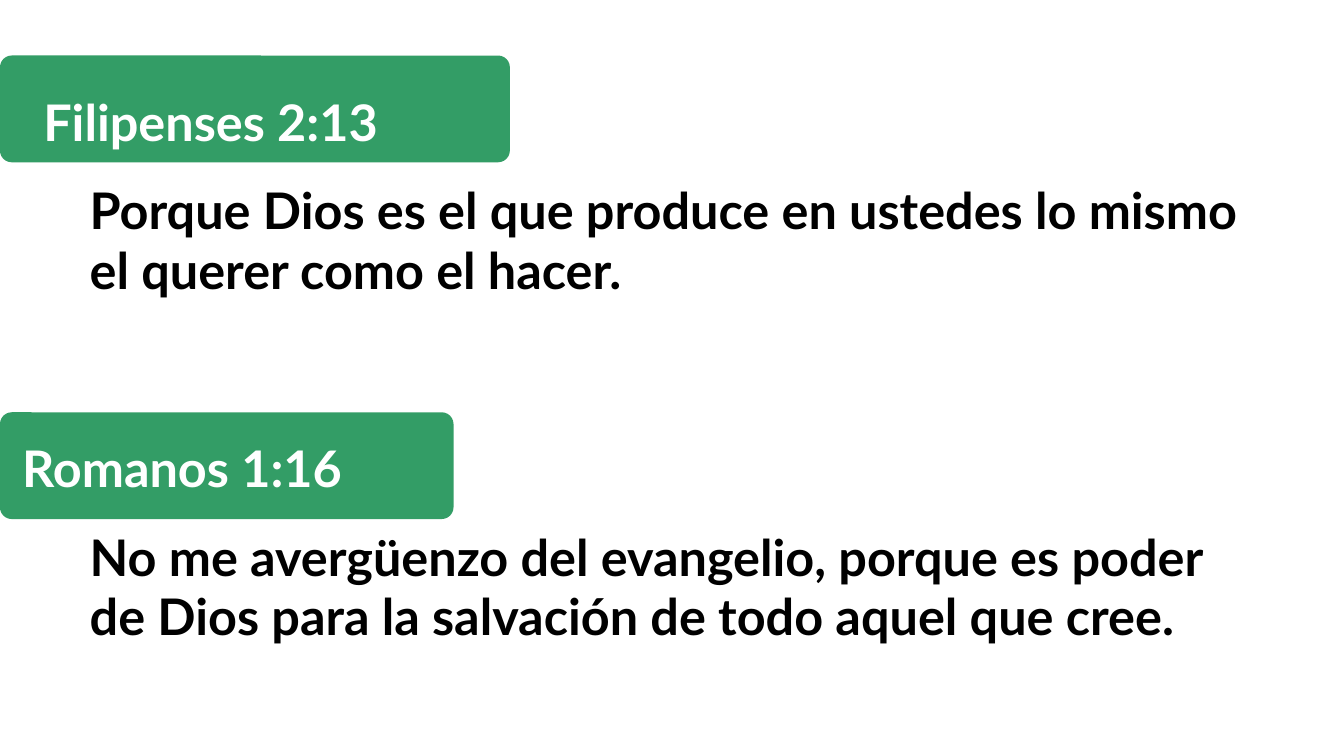
from lxml.etree import SubElement
from pptx import Presentation
from pptx.dml.color import RGBColor as RGB
from pptx.enum.shapes import MSO_SHAPE as SHAPE
from pptx.enum.text import MSO_ANCHOR as ANCHOR, MSO_AUTO_SIZE as AUTO, PP_ALIGN as ALIGN
from pptx.oxml.ns import qn
from pptx.util import Cm, Pt

COLORS = {"green": "008540", "white": "FFFFFF", "black": "000000"}
FRAME = {"margin_left": 0, "margin_top": 0, "margin_right": 0, "margin_bottom": 0,
         "word_wrap": True, "auto_size": AUTO.NONE, "vertical_anchor": ANCHOR.TOP}
PARAGRAPH = {"alignment": ALIGN.LEFT, "space_before": Pt(0), "space_after": Pt(0)}
FONT = {"name": "Lato", "size": Pt(36), "bold": True}
PASSAGES = [
    {"box": (0, 1.4, 12.85, 2.69), "heading": (1.09, 0.28, 14.4, 2.16),
     "verse": (2.26, 3.17, 29.34, 5.33), "slots": (0, 2), "name": "Filipenses 2:13",
     "text": "Porque Dios es el que produce en ustedes lo mismo el querer como el hacer."},
    {"box": (0, 10.39, 11.43, 2.69), "heading": (0.56, 0.02, 15.49, 2.16),
     "verse": (2.26, 2.92, 29.34, 5.33), "slots": (1, 4), "name": "Romanos 1:16",
     "text": "No me avergüenzo del evangelio, porque es poder de Dios "
             "para la salvación de todo aquel que cree."},
]


def set_all(obj, values):
    """Set each attribute of obj from a dict."""
    for name, value in values.items():
        setattr(obj, name, value)


def add_tab(s, box):
    """Draw a translucent green tab behind the text."""
    sp = s.shapes.add_shape(SHAPE.ROUNDED_RECTANGLE, *map(Cm, box))
    sp.shadow.inherit = False
    sp.adjustments[0] = 0.11
    sp.fill.solid()
    sp.fill.fore_color.rgb = RGB.from_string(COLORS["green"])
    sp.line.fill.background()
    color = sp._element.spPr.find(qn("a:solidFill"))[0]
    SubElement(color, qn("a:alpha"), val="80000")
    s.shapes._spTree.insert(2, sp._element)


def fill_text(sp, origin, place, text, color, spacing):
    """Place and format a placeholder relative to an origin."""
    x, y, w, h = place
    set_all(sp, {"left": Cm(origin[0] + x), "top": Cm(origin[1] + y),
                 "width": Cm(w), "height": Cm(h)})
    tf = sp.text_frame
    set_all(tf, FRAME)
    p = tf.paragraphs[0]
    set_all(p, {**PARAGRAPH, "line_spacing": spacing})
    pPr = p._p.get_or_add_pPr()
    pPr.set("marL", "0")
    pPr.set("indent", "0")
    SubElement(pPr, qn("a:buNone"))
    r = p.add_run()
    r.text = text
    set_all(r.font, FONT)
    r.font.color.rgb = RGB.from_string(COLORS[color])


def add_passage(s, box, heading, verse, slots, name, text):
    """Build a tab with its heading and the verse below it."""
    add_tab(s, box)
    holders = {sp.placeholder_format.idx: sp for sp in s.placeholders}
    fill_text(holders[slots[0]], box[:2], heading, name, "white", 1.4)
    fill_text(holders[slots[1]], box[:2], verse, text, "black", 0.99)


def main():
    """Build and save the slide."""
    prs = Presentation()
    set_all(prs, {"slide_width": Cm(33.87), "slide_height": Cm(19.05)})
    s = prs.slides.add_slide(prs.slide_layouts.get_by_name("Comparison"))
    for passage in PASSAGES:
        add_passage(s, **passage)
    for sp in list(s.placeholders):
        if not sp.text_frame.text:
            s.shapes._spTree.remove(sp._element)
    prs.save("out.pptx")


if __name__ == "__main__":
    main()
